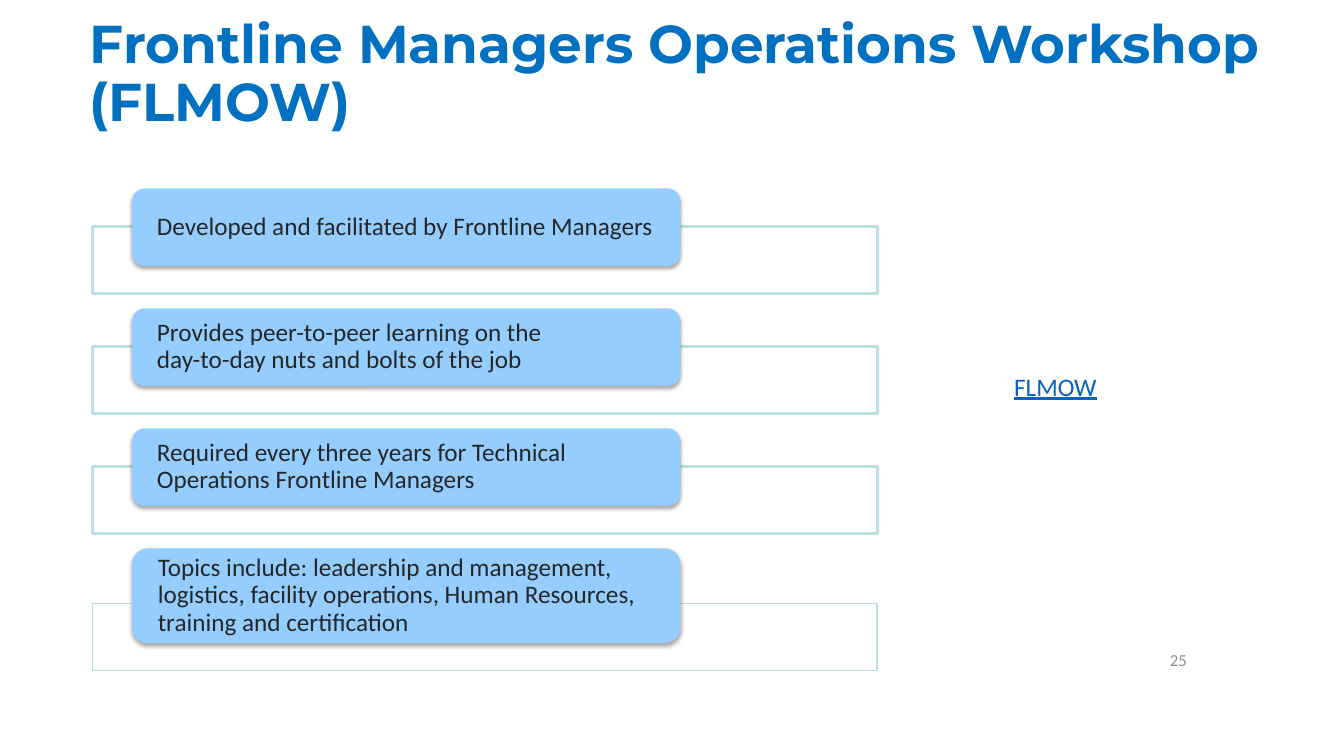
"""Build the Frontline Managers Operations Workshop slide."""
import lxml.etree
import pptx
import pptx.dml.color
import pptx.enum.shapes
import pptx.enum.text
import pptx.oxml
import pptx.oxml.ns
import pptx.util

PX = 9144
COLORS = {
    "title": "0070C0",
    "frame": "BBE0E3",
    "card": "96CDFF",
    "text": "262626",
    "link": "0563C1",
    "number": "8C8C8C",
    "white": "FFFFFF",
    "shadow": "000000",
}
ALIGN = pptx.enum.text.PP_ALIGN
ANCHOR = pptx.enum.text.MSO_ANCHOR
SHAPE = pptx.enum.shapes.MSO_SHAPE


def color(name):
    return pptx.dml.color.RGBColor.from_string(COLORS[name])


def write_text(shape, text, color_name, font, frame_format, para_format):
    frame = shape.text_frame
    for name, value in {"word_wrap": True, **frame_format}.items():
        setattr(frame, name, value)
    para = frame.paragraphs[0]
    para.text = text
    for name, value in {"alignment": ALIGN.LEFT, **para_format}.items():
        setattr(para, name, value)
    for span in para.runs:
        span.font.color.rgb = color(color_name)
        for name, value in font.items():
            setattr(span.font, name, value)


deck = pptx.Presentation()
deck.slide_width, deck.slide_height = 1333 * PX, 750 * PX
page = deck.slides.add_slide(deck.slide_layouts[6])

labels = [
    (("FLMOW"), (996, 363, 105, 40), "link",
     {"name": "Calibri", "size": pptx.util.Pt(18), "underline": True}, {}, {}),
    ("25", (942, 635, 245, 40), "number",
     {"name": "Calibri", "size": pptx.util.Pt(12)},
     {"vertical_anchor": ANCHOR.MIDDLE}, {"alignment": ALIGN.RIGHT}),
    ("Frontline Managers Operations Workshop (FLMOW)", (79, 37, 1254, 75), "title",
     {"name": "Montserrat", "size": pptx.util.Pt(38), "bold": True},
     {"vertical_anchor": ANCHOR.MIDDLE}, {"line_spacing": 0.9}),
]
for text, place, color_name, font, frame_format, para_format in labels:
    box = page.shapes.add_textbox(*(length * PX for length in place))
    write_text(box, text, color_name, font, frame_format, para_format)

cards = [
    ("Developed and facilitated by Frontline Managers", 77, 2),
    ("Provides peer-to-peer learning on the\vday-to-day nuts and bolts of the job", 77, 2),
    ("Required every three years for Technical Operations Frontline Managers", 77, 2),
    ("Topics include: leadership and management, logistics, facility operations, "
     "Human Resources, training and certification", 94, 1),
]
FIRST_TOP, PITCH, OVERLAP = 187, 119, 39
card_font = {"name": "Calibri", "size": pptx.util.Pt(18)}
card_format = {
    "vertical_anchor": ANCHOR.MIDDLE,
    "margin_left": 21 * PX,
    "margin_right": 21 * PX,
    "margin_top": 0,
    "margin_bottom": 0,
}
shadow_xml = (
    f'<a:effectLst {pptx.oxml.ns.nsdecls("a")}>'
    f'<a:outerShdw blurRad="{pptx.util.Pt(3.1)}" dist="{pptx.util.Pt(1.8)}" '
    f'dir="5400000" rotWithShape="0"><a:srgbClr val="{COLORS["shadow"]}">'
    '<a:alpha val="35000"/></a:srgbClr></a:outerShdw></a:effectLst>'
)
for row, (text, height, line_width) in enumerate(cards):
    top = FIRST_TOP + row * PITCH
    frame_top = top + height - OVERLAP
    frame = page.shapes.add_shape(SHAPE.RECTANGLE, 92 * PX, frame_top * PX, 778 * PX, 66 * PX)
    frame.shadow.inherit = False
    frame.fill.solid()
    frame.fill.fore_color.rgb = color("white")
    tint = frame.fill._xPr.find(".//" + pptx.oxml.ns.qn("a:srgbClr"))
    lxml.etree.SubElement(tint, pptx.oxml.ns.qn("a:alpha"), val="90000")
    frame.line.color.rgb = color("frame")
    frame.line.width = pptx.util.Pt(line_width)

    card = page.shapes.add_shape(SHAPE.ROUNDED_RECTANGLE, 131 * PX, top * PX, 544 * PX, height * PX)
    card.fill.solid()
    card.fill.fore_color.rgb = color("card")
    card.line.fill.background()
    card._element.spPr.append(pptx.oxml.parse_xml(shadow_xml))
    write_text(card, text, "text", card_font, card_format, {"line_spacing": 0.9})

deck.save("out.pptx")
